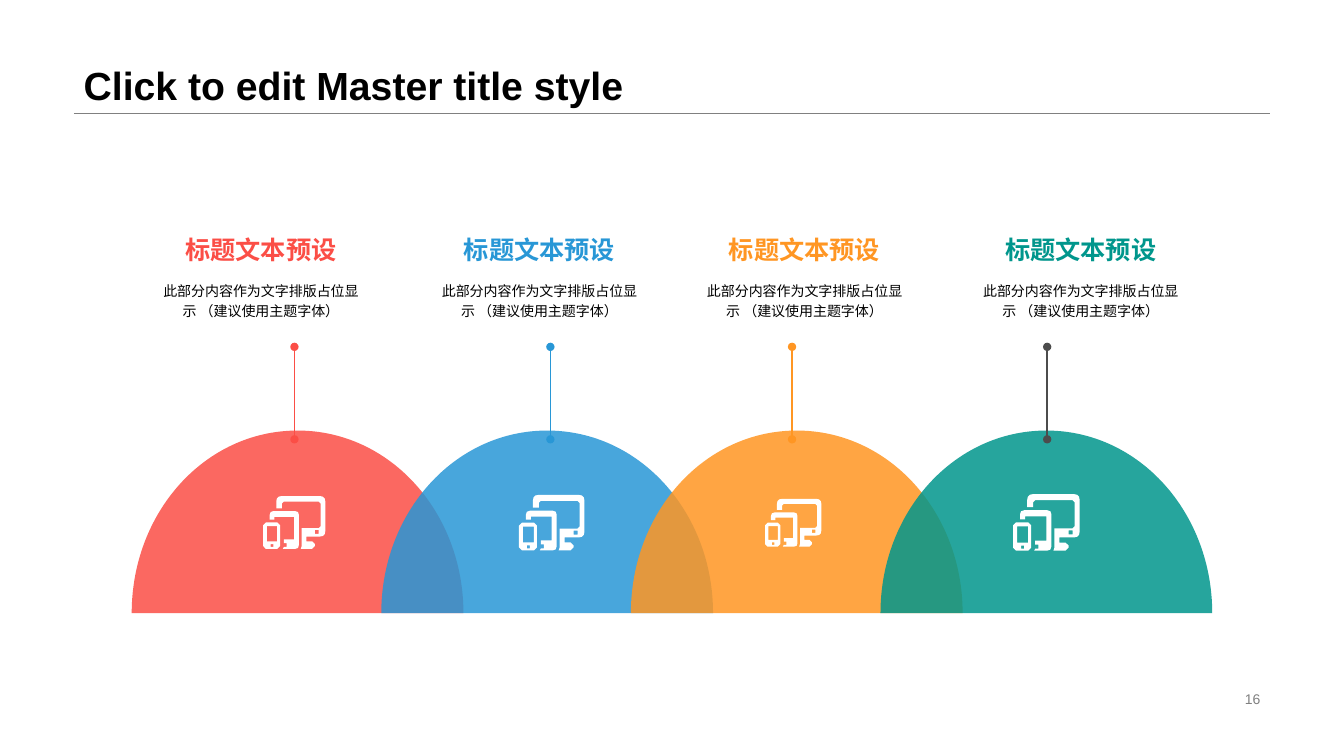
"""Builds a slide with four overlapping domes, each pinned to a caption."""
import math

from lxml import etree
from pptx import Presentation
from pptx.dml.color import RGBColor
from pptx.enum import shapes, text
from pptx.oxml import ns
from pptx.util import Cm, Pt

BLACK = RGBColor(0x00, 0x00, 0x00)
WHITE = RGBColor(0xFF, 0xFF, 0xFF)
GREY = RGBColor(0x80, 0x80, 0x80)
DARK = RGBColor(0x4C, 0x4C, 0x4C)
RED = RGBColor(0xFB, 0x4E, 0x46)
BLUE = RGBColor(0x28, 0x97, 0xD6)
ORANGE = RGBColor(0xFF, 0x96, 0x23)
TEAL = RGBColor(0x00, 0x96, 0x8C)

FONT = "Arial"
HEADING = "标题文本预设"
BODY = "此部分内容作为文字排版占位显示 （建议使用主题字体）"

# Colour, pin colour, caption left, pin x, icon (left, top, width), in cm
COLUMNS = [
    (RED, RED, 4.11, 7.42, (6.63, 12.5, 1.57)),
    (BLUE, BLUE, 11.13, 13.87, (13.08, 12.47, 1.65)),
    (ORANGE, ORANGE, 17.81, 19.96, (19.28, 12.57, 1.42)),
    (TEAL, DARK, 24.77, 26.39, (25.53, 12.45, 1.68)),
]

# Corners as (x, y, radius) on a grid 66 units wide
ICON_WIDTH = 66
ICON_OUTLINES = [
    [(8, 51, 0), (11, 51, 0), (11, 54, 0), (8, 54, 0)],
    [(55, 36, 0), (59, 36, 0), (59, 40, 0), (55, 40, 0)],
    [(4, 32, 0), (15, 32, 0), (15, 48, 0), (4, 48, 0)],
    [(0, 28, 3), (18, 28, 3), (18, 56, 3), (0, 56, 3)],
    [(7, 16, 4), (38, 16, 4), (38, 56, 4), (21, 56, 0), (22, 54, 0),
     (25, 54, 0), (25, 50, 0), (22, 50, 0), (22, 46, 0), (33, 46, 0),
     (33, 22, 0), (12, 22, 0), (12, 25, 0), (7, 25, 0)],
    [(14, 0, 6), (66, 0, 6), (66, 43, 6), (46, 43, 0), (46, 48, 0),
     (55, 48, 3), (55, 56, 3), (40, 56, 0), (41, 53, 0), (41, 34, 0),
     (61, 34, 2), (61, 6, 2), (20, 6, 2), (20, 13, 0), (14, 13, 0)],
]


def add_text(slide, box, words, size, color, bold=False, inset=True, wrap=True,
             align=text.PP_ALIGN.LEFT, anchor=text.MSO_ANCHOR.MIDDLE, spacing=1.0):
    """Place one paragraph in a box given in cm."""
    shape = slide.shapes.add_textbox(*map(Cm, box))
    frame = shape.text_frame
    frame.word_wrap = wrap
    frame.vertical_anchor = anchor
    if not inset:
        frame.margin_left = frame.margin_right = 0
        frame.margin_top = frame.margin_bottom = 0
    frame.text = words
    paragraph = frame.paragraphs[0]
    paragraph.alignment = align
    paragraph.line_spacing = spacing
    font = paragraph.runs[0].font
    font.name, font.size, font.bold = FONT, Pt(size), bold
    font.color.rgb = color


def add_line(slide, start, end, color, width, dotted_ends=False):
    """Draw a straight line, with round ends if asked."""
    line = slide.shapes.add_connector(
        shapes.MSO_CONNECTOR.STRAIGHT, *map(Cm, (*start, *end)))
    line.line.color.rgb = color
    line.line.width = Pt(width)
    if dotted_ends:
        outline = line.line._get_or_add_ln()
        for tag in ("a:headEnd", "a:tailEnd"):
            etree.SubElement(outline, ns.qn(tag), type="oval")
    etree.SubElement(line._element.spPr, ns.qn("a:effectLst"))


def add_outline(slide, contours, color):
    """Fill closed contours, given as points in cm, as one shape."""
    contours = [[(Cm(x), Cm(y)) for x, y in contour] for contour in contours]
    builder = slide.shapes.build_freeform(*contours[0][0])
    for index, contour in enumerate(contours):
        if index:
            builder.move_to(*contour[0])
        builder.add_line_segments(contour[1:], close=True)
    shape = builder.convert_to_shape()
    shape.shadow.inherit = False
    shape.fill.solid()
    shape.fill.fore_color.rgb = color
    shape.line.fill.background()
    return shape


def round_corners(corners):
    """Return the points of a polygon, with larger radii cut in more steps."""
    points = []
    for index, (x, y, radius) in enumerate(corners):
        if not radius:
            points.append((x, y))
            continue
        near = []
        for other in (corners[index - 1], corners[(index + 1) % len(corners)]):
            reach = radius / math.dist((x, y), other[:2])
            near.append((x + (other[0] - x) * reach, y + (other[1] - y) * reach))
        (ax, ay), (bx, by) = near
        steps = radius // 2
        for step in range(steps + 1):
            t = step / steps
            p, q, r = (1 - t) ** 2, 2 * t * (1 - t), t ** 2
            points.append((p * ax + q * x + r * bx, p * ay + q * y + r * by))
    return points


def add_header(slide, left, width, height):
    """Place the title and the rule under it."""
    add_line(slide, (left, height), (left + width, height), GREY, 0.25)
    add_text(slide, (left, 0, width, height), "Click to edit Master title style",
             28, BLACK, bold=True, anchor=text.MSO_ANCHOR.BOTTOM, spacing=0.9)


def add_caption(slide, left, top, width, color):
    """Place a heading with its body text below."""
    centre = text.PP_ALIGN.CENTER
    add_text(slide, (left, top + 0.84, width, 1.75), BODY, 10, BLACK,
             inset=False, align=centre, spacing=1.2)
    add_text(slide, (left, top, width, 0.91), HEADING, 18, color, bold=True,
             inset=False, wrap=False, align=centre)


def add_dome(slide, left, top, width, height, color):
    """Draw a translucent half ellipse that fills its box."""
    corners = [(left, top + height), (left + width / 2, top),
               (left + width, top + height)]
    shape = add_outline(slide, [corners], color)
    properties = shape._element.spPr
    fill = properties.find(ns.qn("a:solidFill"))
    etree.SubElement(fill[0], ns.qn("a:alpha"), val="85000")
    curves = [[(0, 0.45), (0.22, 0), (0.5, 0)], [(0.78, 0), (1, 0.45), (1, 1)]]
    for side, curve in zip(list(properties.iter(ns.qn("a:lnTo"))), curves):
        bezier = etree.Element(ns.qn("a:cubicBezTo"))
        for x, y in curve:
            etree.SubElement(bezier, ns.qn("a:pt"), x=str(round(x * shape.width)),
                             y=str(round(y * shape.height)))
        side.getparent().replace(side, bezier)


def add_icon(slide, left, top, width):
    """Draw the phone, tablet and monitor icon at a given width."""
    scale = width / ICON_WIDTH
    contours = [[(left + x * scale, top + y * scale) for x, y in round_corners(corners)]
                for corners in ICON_OUTLINES]
    add_outline(slide, contours, WHITE)


def add_domes(slide, left, top, width, height, pitch):
    """Lay out the overlapping domes, then their captions, pins and icons."""
    for index, (color, *_) in enumerate(COLUMNS):
        add_dome(slide, left + index * pitch, top, width, height, color)
    for color, pin_color, caption_left, pin_x, icon in COLUMNS:
        add_caption(slide, caption_left, top - 5.03, 4.93, color)
        add_line(slide, (pin_x, top + 0.22), (pin_x, top - 2.11), pin_color, 1, True)
        add_icon(slide, *icon)


def main():
    """Build and save the slide."""
    presentation = Presentation()
    presentation.slide_width, presentation.slide_height = Cm(33.87), Cm(19.05)
    slide = presentation.slides.add_slide(presentation.slide_layouts[6])
    add_header(slide, 1.86, 30.15, 2.86)
    add_domes(slide, 3.32, 10.85, 8.36, 4.6, 6.29)
    add_text(slide, (23.93, 17.32, 8.08, 0.58), "16", 10, GREY,
             align=text.PP_ALIGN.RIGHT)
    presentation.save("out.pptx")


if __name__ == "__main__":
    main()
